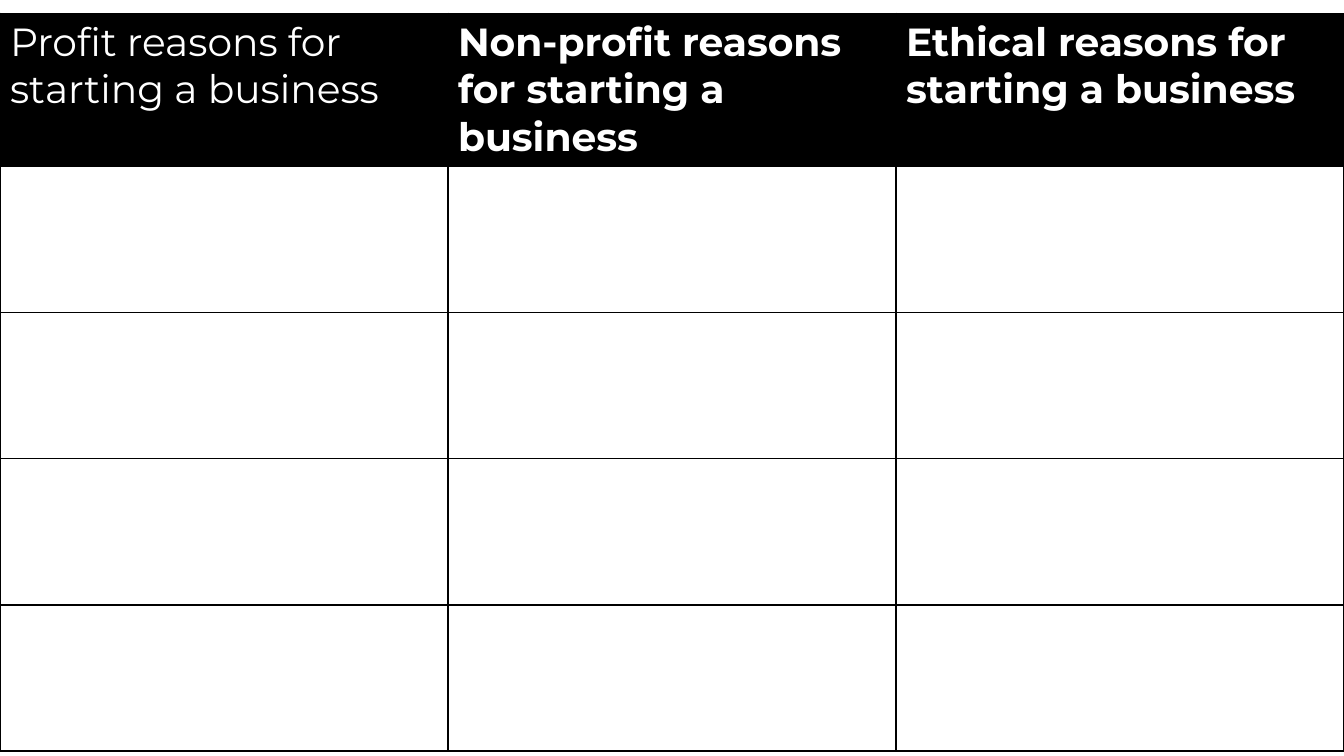
from lxml.etree import SubElement
from pptx import Presentation
from pptx.dml.color import RGBColor
from pptx.oxml.ns import qn
from pptx.util import Inches, Pt

HEADINGS = [  # text, bold
    ("Profit reasons for starting a business", False),
    ("Non-profit reasons for starting a business", True),
    ("Ethical reasons for starting a business", True),
]
ANSWER_ROWS = 4
BLACK, WHITE = "000000", "FFFFFF"
FONT, HEADING_SIZE, BORDER_WIDTH = "Montserrat", Pt(28), Pt(1)
SLIDE_WIDTH, SLIDE_HEIGHT = Inches(13.33), Inches(7.5)
TABLE_TOP, ROW_HEIGHT = Inches(0.13), Inches(1.45)


def paint(fill, color):
    fill.solid()
    fill.fore_color.rgb = RGBColor.from_string(color)


def add_borders(cell, color):
    properties = cell._tc.get_or_add_tcPr()
    for position, side in enumerate(("lnL", "lnR", "lnT", "lnB")):
        line = SubElement(properties, qn(f"a:{side}"), w=str(BORDER_WIDTH))
        properties.insert(position, line)  # borders precede the fill
        solid = SubElement(line, qn("a:solidFill"))
        SubElement(solid, qn("a:srgbClr"), val=color)


def write_heading(cell, text, bold):
    cell.text_frame.text = text
    font = cell.text_frame.paragraphs[0].runs[0].font
    font.name, font.size, font.bold = FONT, HEADING_SIZE, bold
    paint(font.fill, WHITE)


def main():
    deck = Presentation()
    deck.slide_width, deck.slide_height = SLIDE_WIDTH, SLIDE_HEIGHT
    slide = deck.slides.add_slide(deck.slide_layouts[6])
    paint(slide.background.fill, WHITE)

    row_count = 1 + ANSWER_ROWS
    reasons = slide.shapes.add_table(
        row_count, len(HEADINGS), 0, TABLE_TOP, SLIDE_WIDTH, ROW_HEIGHT * row_count
    ).table
    for row_index, row in enumerate(reasons.rows):
        for cell in row.cells:
            paint(cell.fill, WHITE if row_index else BLACK)
            add_borders(cell, BLACK)
    for cell, (text, bold) in zip(reasons.rows[0].cells, HEADINGS):
        write_heading(cell, text, bold)

    deck.save("out.pptx")


if __name__ == "__main__":
    main()
